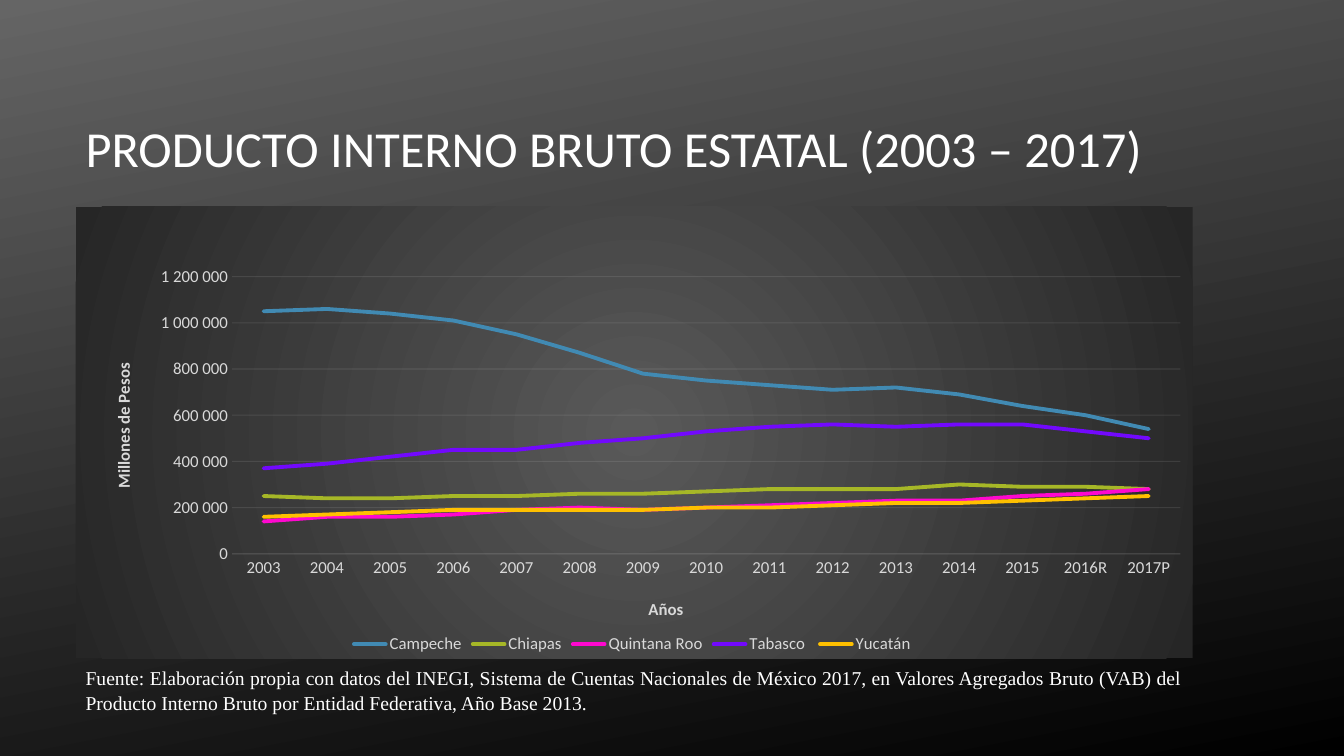
from dataclasses import dataclass

import lxml.etree
import pptx
import pptx.chart.data
import pptx.dml.color
import pptx.enum.chart
import pptx.enum.text
import pptx.oxml
import pptx.oxml.ns
import pptx.util
from pptx.util import Inches

RGBColor = pptx.dml.color.RGBColor
WHITE = RGBColor(0xFF, 0xFF, 0xFF)
BLACK = RGBColor(0x00, 0x00, 0x00)
SLATE = RGBColor(0x65, 0x65, 0x65)
LABEL_GRAY = RGBColor(0xD9, 0xD9, 0xD9)
RULE_GRAY = RGBColor(0xF2, 0xF2, 0xF2)
CAMPECHE_BLUE = RGBColor(0x41, 0x8A, 0xB3)
CHIAPAS_GREEN = RGBColor(0xA6, 0xB7, 0x27)
QUINTANA_PINK = RGBColor(0xFE, 0x08, 0xCF)
TABASCO_VIOLET = RGBColor(0x72, 0x09, 0xFD)
YUCATAN_GOLD = RGBColor(0xFF, 0xC0, 0x00)

LEFT, WIDTH = Inches(0.75), Inches(11.08)
UNIT = 10_000
YEARS = [str(year) for year in range(2003, 2016)] + ["2016R", "2017P"]


@dataclass
class State:
    name: str
    color: RGBColor
    output: list[int]  # in units of 10 000 million pesos


@dataclass
class TextBlock:
    text: str
    top: float
    height: float
    size: int
    font: str
    anchor: pptx.enum.text.MSO_ANCHOR
    align: pptx.enum.text.PP_ALIGN
    line_spacing: float


STATES = [
    State("Campeche", CAMPECHE_BLUE,
          [105, 106, 104, 101, 95, 87, 78, 75, 73, 71, 72, 69, 64, 60, 54]),
    State("Chiapas", CHIAPAS_GREEN,
          [25, 24, 24, 25, 25, 26, 26, 27, 28, 28, 28, 30, 29, 29, 28]),
    State("Quintana Roo", QUINTANA_PINK,
          [14, 16, 16, 17, 19, 20, 19, 20, 21, 22, 23, 23, 25, 26, 28]),
    State("Tabasco ", TABASCO_VIOLET,
          [37, 39, 42, 45, 45, 48, 50, 53, 55, 56, 55, 56, 56, 53, 50]),
    State("Yucatán ", YUCATAN_GOLD,
          [16, 17, 18, 19, 19, 19, 19, 20, 20, 21, 22, 22, 23, 24, 25]),
]

TEXT_BLOCKS = [
    TextBlock("PRODUCTO INTERNO BRUTO ESTATAL (2003 – 2017)", 0.67, 1.59, 36, "Calibri",
              pptx.enum.text.MSO_ANCHOR.MIDDLE, pptx.enum.text.PP_ALIGN.LEFT, 1.0),
    TextBlock("Fuente: Elaboración propia con datos del INEGI, Sistema de Cuentas Nacionales "
              "de México 2017, en Valores Agregados Bruto (VAB) del Producto Interno Bruto "
              "por Entidad Federativa, Año Base 2013.", 6.54, 0.59, 14, "Times New Roman",
              pptx.enum.text.MSO_ANCHOR.TOP, pptx.enum.text.PP_ALIGN.JUSTIFY, 1.07),
]

CHART_FILL = f"""<c:spPr {pptx.oxml.ns.nsdecls("c", "a")}>
<a:gradFill><a:gsLst>
<a:gs pos="0"><a:srgbClr val="595959"/></a:gs>
<a:gs pos="100000"><a:srgbClr val="262626"/></a:gs>
</a:gsLst><a:path path="circle">
<a:fillToRect l="50000" t="50000" r="50000" b="50000"/>
</a:path></a:gradFill><a:ln><a:noFill/></a:ln></c:spPr>"""


def style_font(font, size: int, color: RGBColor, name: str = "Calibri", bold=False) -> None:
    font.size = pptx.util.Pt(size)
    font.color.rgb = color
    font.name = name
    font.bold = bold


def add_text(page, block: TextBlock) -> None:
    box = page.shapes.add_textbox(LEFT, Inches(block.top), WIDTH, Inches(block.height))
    frame = box.text_frame
    frame.word_wrap = True
    frame.vertical_anchor = block.anchor
    frame.text = block.text
    para = frame.paragraphs[0]
    para.alignment = block.align
    para.line_spacing = block.line_spacing
    style_font(para.runs[0].font, block.size, WHITE, block.font)


def set_layout(element, index: int, **settings) -> None:
    """Place a chart part by fractions of the chart, as its child at index."""
    for old in element.xpath("c:layout"):
        element.remove(old)
    values = "".join(f'<c:{key} val="{value}"/>' for key, value in settings.items())
    element.insert(index, pptx.oxml.parse_xml(
        f'<c:layout {pptx.oxml.ns.nsdecls("c")}><c:manualLayout>{values}'
        "</c:manualLayout></c:layout>"))


def style_faint_line(line) -> None:
    line.color.rgb = RULE_GRAY
    line.width = pptx.util.Pt(0.75)


def style_axis(axis, title: str, x: float, y: float) -> None:
    axis.major_tick_mark = pptx.enum.chart.XL_TICK_MARK.NONE
    axis.minor_tick_mark = pptx.enum.chart.XL_TICK_MARK.NONE
    style_font(axis.tick_labels.font, 12, LABEL_GRAY)
    frame = axis.axis_title.text_frame
    frame.text = title
    style_font(frame.paragraphs[0].runs[0].font, 12, LABEL_GRAY, bold=True)
    set_layout(axis.axis_title.element if hasattr(axis.axis_title, "element")
               else axis.axis_title._element, 1, xMode="edge", yMode="edge", x=x, y=y)


def add_output_chart(page) -> None:
    data = pptx.chart.data.CategoryChartData()
    data.categories = YEARS
    for state in STATES:
        data.add_series(state.name, [value * UNIT for value in state.output])
    chart = page.shapes.add_chart(pptx.enum.chart.XL_CHART_TYPE.LINE, LEFT, Inches(2.05),
                                  WIDTH, Inches(4.48), data).chart
    style_font(chart.font, 10, WHITE)
    chart.has_title = False
    chart.has_legend = True
    chart.legend.position = pptx.enum.chart.XL_LEGEND_POSITION.BOTTOM
    chart.legend.include_in_layout = False
    style_font(chart.legend.font, 12, LABEL_GRAY)

    years, pesos = chart.category_axis, chart.value_axis
    style_axis(years, "Años", 0.51, 0.86)
    style_faint_line(years.format.line)
    style_axis(pesos, "Millones de Pesos", 0.03, 0.34)
    pesos.format.line.fill.background()
    style_faint_line(pesos.major_gridlines.format.line)
    pesos.minimum_scale, pesos.maximum_scale = 0, 1_200_000
    pesos.major_unit = 200_000
    pesos.tick_labels.number_format = r"###\ ###\ ###\ ###\ ##0"
    pesos.tick_labels.number_format_is_linked = False

    chart.plots[0].vary_by_categories = False
    for series, state in zip(chart.plots[0].series, STATES):
        series.smooth = False
        series.format.line.color.rgb = state.color
        series.format.line.width = pptx.util.Pt(2.75)

    root = chart.element
    for line in root.xpath(".//c:ser/c:spPr/a:ln"):
        line.set("cap", "rnd")
    for color in root.xpath(f".//a:ln//a:srgbClr[@val='{RULE_GRAY}']"):
        lxml.etree.SubElement(color, pptx.oxml.ns.qn("a:alpha"), val="10000")
    for body in root.xpath(".//c:valAx/c:title/c:tx/c:rich/a:bodyPr"):
        body.set("rot", "-5400000")
        body.set("vert", "horz")
    set_layout(root.xpath("c:chart/c:plotArea")[0], 0, layoutTarget="inner",
               xMode="edge", yMode="edge", x=0.14, y=0.155, w=0.849, h=0.614)
    root.xpath("c:chart")[0].addnext(pptx.oxml.parse_xml(CHART_FILL))


def main() -> None:
    deck = pptx.Presentation()
    deck.slide_width, deck.slide_height = Inches(13.33), Inches(7.5)
    page = deck.slides.add_slide(deck.slide_layouts[6])
    fill = page.background.fill
    fill.gradient()
    fill.gradient_angle = 360 - 79
    for stop, color, position in zip(fill.gradient_stops, (SLATE, BLACK), (0, 1)):
        stop.color.rgb = color
        stop.position = position
    title, source = TEXT_BLOCKS
    add_text(page, title)
    add_output_chart(page)
    add_text(page, source)
    deck.save("out.pptx")


if __name__ == "__main__":
    main()
